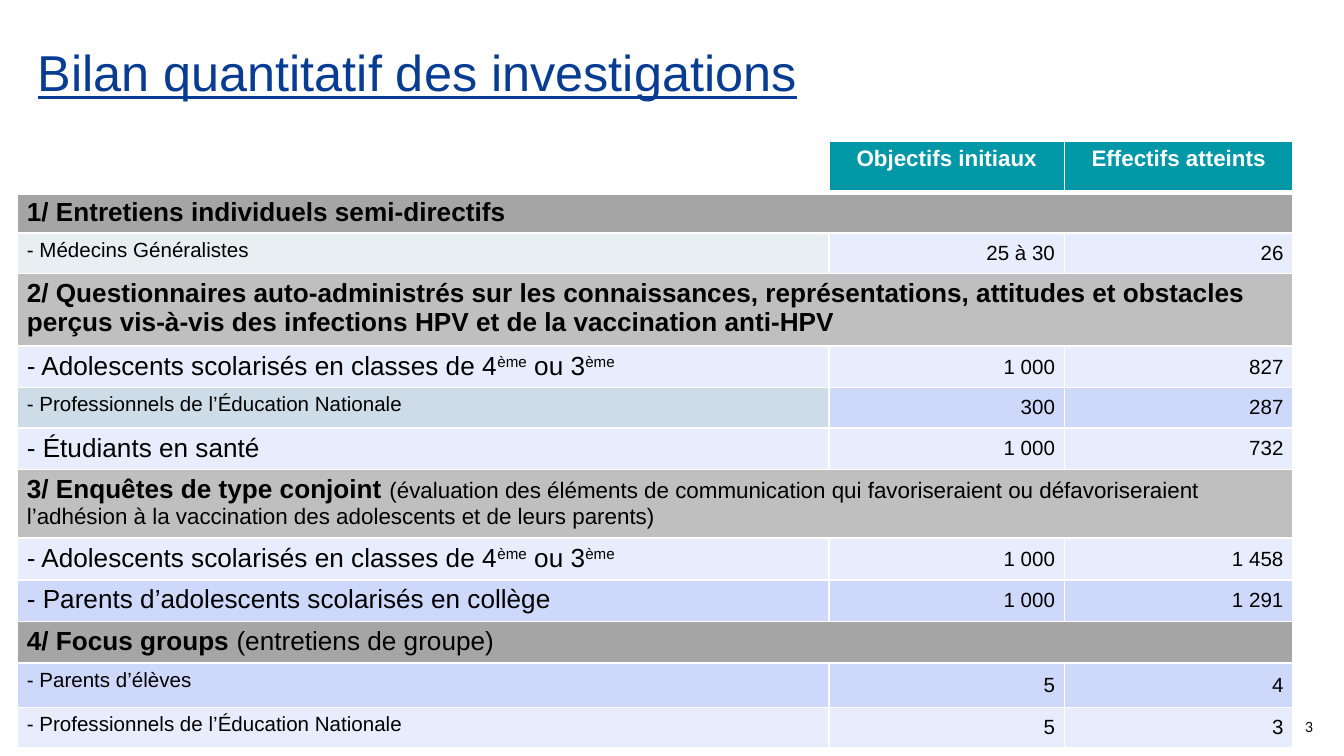
import pptx
import pptx.dml.color
import pptx.enum.text
import pptx.oxml
import pptx.util
from pptx.util import Inches

ALIGN = pptx.enum.text.PP_ALIGN
ANCHOR = pptx.enum.text.MSO_ANCHOR

SLIDE_WIDTH = 10
SLIDE_HEIGHT = SLIDE_WIDTH * 9 / 16
TITLE = "Bilan quantitatif des investigations"
HEADERS = ["Objectifs initiaux", "Effectifs atteints"]
HEADER_HEIGHT = 0.37
COLUMN_WIDTHS = [6.04, 1.75, 1.7]
TEAL, WHITE, BLACK, NAVY = "0097A7", "FFFFFF", "000000", "083C92"
DARK, GREY, PALE, BLUE = "A5A5A5", "BFBFBF", "E8EDFD", "CDD8FB"

BIG = {"size": 14}
SMALL = {"size": 11}
BOLD = {"size": 14, "bold": True}
RAISED = {"size": 14, "baseline": 30}
TEENAGERS = [
    ("- Adolescents scolarisés en classes de 4", BIG), ("ème", RAISED),
    (" ou 3", BIG), ("ème", RAISED),
]
TEACHERS = [("- Professionnels de l’Éducation Nationale", SMALL)]

ROWS = [
    (0.3, DARK, DARK, [("1/ Entretiens individuels semi-directifs", BOLD)], []),
    (0.3, "E8EFF3", PALE, [("- Médecins Généralistes", SMALL)], ["25 à 30", "26"]),
    (0.54, GREY, GREY, [(
        "2/ Questionnaires auto-administrés sur les connaissances, représentations, "
        "attitudes et obstacles perçus vis-à-vis des infections HPV et de la "
        "vaccination anti-HPV", BOLD)], []),
    (0.31, PALE, PALE, TEENAGERS, ["1 000", "827"]),
    (0.3, "CDDCE7", BLUE, TEACHERS, ["300", "287"]),
    (0.31, PALE, PALE, [("- Étudiants en santé", BIG)], ["1 000", "732"]),
    (0.51, GREY, GREY, [
        ("3/ Enquêtes de type conjoint ", BOLD),
        ("(évaluation des éléments de communication qui favoriseraient ou "
         "défavoriseraient l’adhésion à la vaccination des adolescents et de leurs "
         "parents)", {"size": 12})], []),
    (0.31, PALE, PALE, TEENAGERS, ["1 000", "1 458"]),
    (0.31, BLUE, BLUE, [("- Parents d’adolescents scolarisés en collège", BIG)],
     ["1 000", "1 291"]),
    (0.31, DARK, DARK, [("4/ Focus groups ", BOLD), ("(entretiens de groupe)", BIG)], []),
    (0.33, BLUE, BLUE, [("- Parents d’élèves", SMALL)], ["5", "4"]),
    (0.3, PALE, PALE, TEACHERS, ["5", "3"]),
]


def color(value):
    return pptx.dml.color.RGBColor.from_string(value)


def add_text(paragraph, text, size=11, bold=False, fill=BLACK, font="Arial",
             underline=False, baseline=0, align=ALIGN.LEFT):
    paragraph.alignment = align
    run = paragraph.add_run()
    run.text = text
    run.font.name = font
    run.font.size = pptx.util.Pt(size)
    run.font.bold = bold
    run.font.underline = underline
    run.font.color.rgb = color(fill)
    if baseline:
        run.font._element.set("baseline", str(baseline * 1000))


def set_insets(frame, horizontal, vertical):
    frame.margin_left = frame.margin_right = Inches(horizontal)
    frame.margin_top = frame.margin_bottom = Inches(vertical)


def format_cell(cell, fill, bottom=1):
    set_insets(cell, 0.07, 0.04)
    properties = cell._tc.get_or_add_tcPr()
    for side, width in (("L", 1), ("R", 1), ("T", 1), ("B", bottom)):
        properties.append(pptx.oxml.parse_xml(
            f'<a:ln{side} xmlns:a="http://schemas.openxmlformats.org/drawingml/2006/main" '
            f'w="{pptx.util.Pt(width)}"><a:solidFill><a:srgbClr val="{WHITE}"/>'
            f'</a:solidFill></a:ln{side}>'))
    cell.fill.solid()
    cell.fill.fore_color.rgb = color(fill)


def add_title(slide):
    title = slide.shapes.title
    title.left, title.top = Inches(0.28), Inches(0.27)
    title.width, title.height = Inches(7.05), Inches(0.46)
    frame = title.text_frame
    frame.auto_size = pptx.enum.text.MSO_AUTO_SIZE.NONE
    frame.vertical_anchor = ANCHOR.MIDDLE
    set_insets(frame, 0, 0)
    paragraph = frame.paragraphs[0]
    paragraph.line_spacing = 1.15
    add_text(paragraph, TITLE, size=27, fill=NAVY, underline=True)


def add_results(slide):
    heights = [HEADER_HEIGHT] + [row[0] for row in ROWS]
    table = slide.shapes.add_table(
        len(heights), len(COLUMN_WIDTHS), Inches(0.13), Inches(1.05),
        Inches(sum(COLUMN_WIDTHS)), Inches(sum(heights))).table
    table.horz_banding = False
    for column, width in zip(table.columns, COLUMN_WIDTHS):
        column.width = Inches(width)
    for row, height in zip(table.rows, heights):
        row.height = Inches(height)

    format_cell(table.cell(0, 0), WHITE, bottom=3)
    for index, header in enumerate(HEADERS, 1):
        cell = table.cell(0, index)
        format_cell(cell, TEAL, bottom=3)
        add_text(cell.text_frame.paragraphs[0], header, size=12, bold=True,
                 fill=WHITE, align=ALIGN.CENTER)

    for index, (height, label_fill, value_fill, label, values) in enumerate(ROWS, 1):
        cells = [table.cell(index, column) for column in range(len(COLUMN_WIDTHS))]
        for cell, fill in zip(cells, (label_fill, value_fill, value_fill)):
            format_cell(cell, fill)
        if not values:
            cells[0].merge(cells[-1])
        for text, style in label:
            add_text(cells[0].text_frame.paragraphs[0], text, **style)
        for cell, value in zip(cells[1:], values):
            cell.vertical_anchor = ANCHOR.MIDDLE
            add_text(cell.text_frame.paragraphs[0], value, align=ALIGN.RIGHT)


def add_page_number(slide):
    box = slide.shapes.add_textbox(Inches(9.31), Inches(5.3), Inches(0.56), Inches(0.22))
    box.text_frame.word_wrap = True
    add_text(box.text_frame.paragraphs[0], "3", size=7.5, font="Lato", align=ALIGN.RIGHT)


def main():
    presentation = pptx.Presentation()
    presentation.slide_width = Inches(SLIDE_WIDTH)
    presentation.slide_height = Inches(SLIDE_HEIGHT)
    slide = presentation.slides.add_slide(presentation.slide_layouts[5])
    add_results(slide)
    add_title(slide)
    add_page_number(slide)
    presentation.save("out.pptx")


if __name__ == "__main__":
    main()
